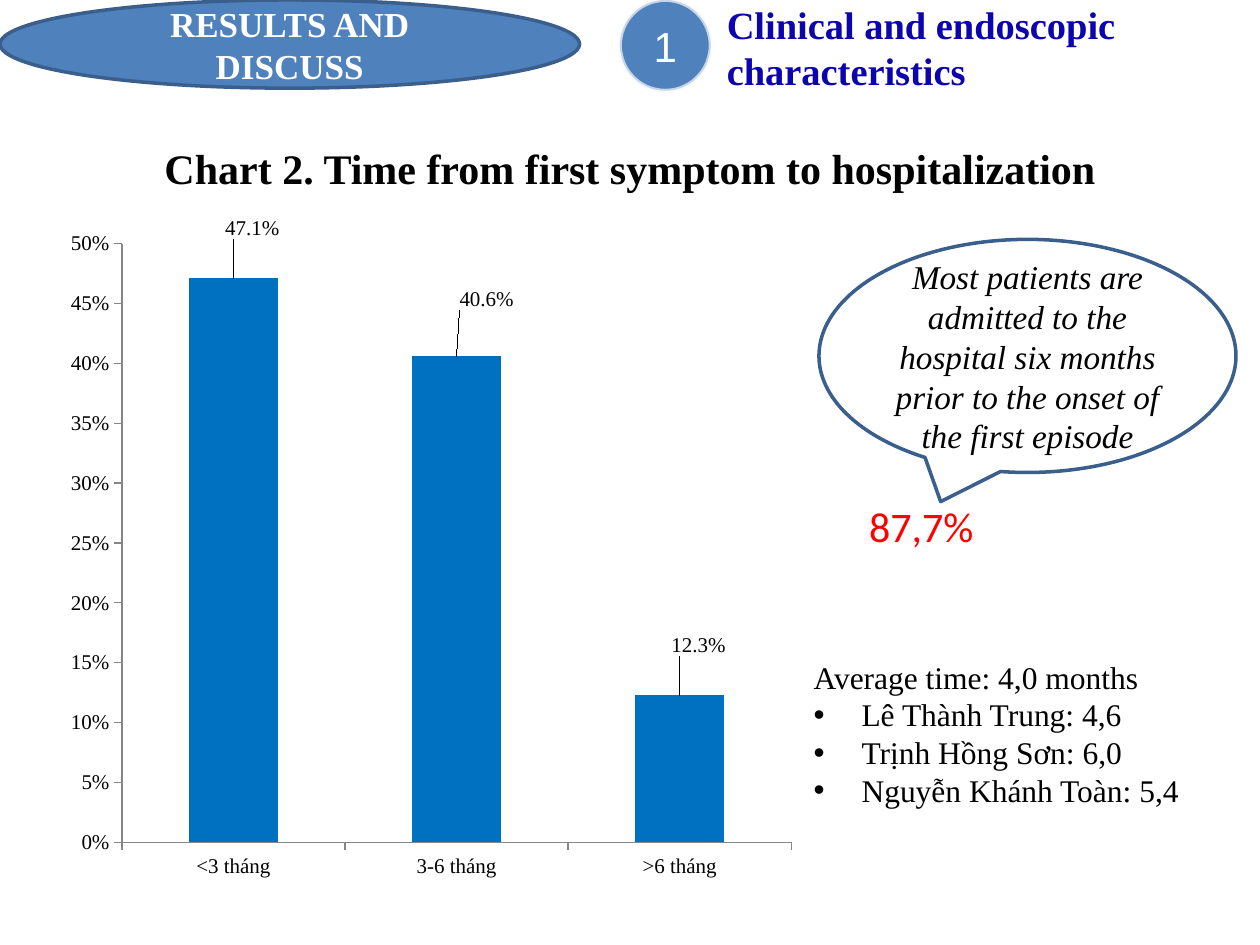
from lxml import etree
from pptx import Presentation
from pptx.chart.data import CategoryChartData
from pptx.dml.color import RGBColor
from pptx.enum.chart import XL_CHART_TYPE, XL_LABEL_POSITION, XL_TICK_MARK
from pptx.enum.shapes import MSO_SHAPE
from pptx.enum.text import MSO_ANCHOR, PP_ALIGN
from pptx.oxml import parse_xml
from pptx.oxml.ns import nsdecls, qn
from pptx.util import Inches, Pt

OVAL, BUBBLE = MSO_SHAPE.OVAL, MSO_SHAPE.OVAL_CALLOUT
LEFT, CENTER = PP_ALIGN.LEFT, PP_ALIGN.CENTER
TOP, MIDDLE = MSO_ANCHOR.TOP, MSO_ANCHOR.MIDDLE
COLUMN = XL_CHART_TYPE.COLUMN_CLUSTERED
ABOVE = XL_LABEL_POSITION.OUTSIDE_END
OUT = XL_TICK_MARK.OUTSIDE

BLACK = RGBColor(0x00, 0x00, 0x00)
WHITE = RGBColor(0xFF, 0xFF, 0xFF)
BLUE = RGBColor(0x4F, 0x81, 0xBD)
EDGE = RGBColor(0x3A, 0x5F, 0x8C)
PALE = RGBColor(0xF8, 0xF8, 0xF8)
NAVY = RGBColor(0x0C, 0x04, 0xAC)
RED = RGBColor(0xFF, 0x00, 0x00)
BAR = RGBColor(0x00, 0x70, 0xC0)
GREY = RGBColor(0x86, 0x86, 0x86)
SERIF = "Times New Roman"

# Content
TITLE = "Chart 2. Time from first symptom to hospitalization"
BADGE = ["RESULTS AND", "DISCUSS"]
TOPIC = "Clinical and endoscopic characteristics"
NOTE = ("Most patients are admitted to the hospital six months "
        "prior to the onset of the first episode")
SHARE = "87,7%"
MEAN = "Average time: 4,0 months"
STUDIES = ["Lê Thành Trung: 4,6", "Trịnh Hồng Sơn: 6,0",
           "Nguyễn Khánh Toàn: 5,4"]
# Group, share of patients, label shift as a part of the chart size
TIMES = [("<3 tháng", 0.471, (0.025, -0.05)),
         ("3-6 tháng", 0.406, (0.04, -0.06)),
         (">6 tháng", 0.123, (0.025, -0.05))]
PLOT = {"x": 0.09, "y": 0.04, "w": 0.89, "h": 0.89}


def write(shape, lines, size, color, align=LEFT, anchor=TOP, wrap=True, **look):
    frame = shape.text_frame
    frame.word_wrap, frame.vertical_anchor = wrap, anchor
    frame.text = "\n".join(lines)
    style = {"name": SERIF, "size": Pt(size), **look}
    for para in frame.paragraphs:
        para.alignment = align
        for run in para.runs:
            run.font.color.rgb = color
            for key, value in style.items():
                setattr(run.font, key, value)
    return frame


def draw(shapes, kind, box, fill, line, width):
    shape = shapes.add_shape(kind, *map(Inches, box))
    shape.shadow.inherit = False
    shape.fill.solid()
    shape.fill.fore_color.rgb = fill
    shape.line.color.rgb = line
    shape.line.width = Pt(width)
    return shape


def text(shapes, box, *args, **look):
    return write(shapes.add_textbox(*map(Inches, box)), *args, **look)


def layout(**parts):
    modes = [(key + "Mode", "edge") for key in "xy" if "w" in parts]
    items = "".join(f'<c:{key} val="{value}"/>'
                    for key, value in [*modes, *parts.items()])
    target = '<c:layoutTarget val="inner"/>' if "w" in parts else ""
    return parse_xml(f'<c:layout {nsdecls("c")}><c:manualLayout>'
                     f'{target}{items}</c:manualLayout></c:layout>')


def bullet(para):
    props = para._p.get_or_add_pPr()
    props.set("marL", str(Inches(0.38)))
    props.set("indent", str(Inches(-0.38)))
    etree.SubElement(props, qn("a:buFont")).set("typeface", "Arial")
    etree.SubElement(props, qn("a:buChar")).set("char", "•")


def graph(shapes):
    data = CategoryChartData(number_format="0.0%")
    data.categories = [name for name, _, _ in TIMES]
    data.add_series("Series 1", [value for _, value, _ in TIMES])
    box = map(Inches, (0.43, 1.72, 5.97, 5.34))
    chart = shapes.add_chart(COLUMN, *box, data).chart
    chart.has_legend = chart.has_title = False
    chart.font.name, chart.font.size = SERIF, Pt(12)
    chart.font.color.rgb = BLACK

    # Axes and plot area
    for axis in (chart.category_axis, chart.value_axis):
        axis.has_major_gridlines = False
        axis.major_tick_mark = OUT
        axis.format.line.color.rgb = GREY
    scale = chart.value_axis
    scale.minimum_scale, scale.maximum_scale, scale.major_unit = 0, 0.5, 0.05
    scale.tick_labels.number_format = "0%"
    scale.tick_labels.number_format_is_linked = False
    area = chart._chartSpace.chart.plotArea
    for old in area.findall(qn("c:layout")):
        area.remove(old)
    area.insert(0, layout(**PLOT))

    # Bars and shifted labels
    plot = chart.plots[0]
    plot.gap_width, plot.vary_by_categories = 150, False
    bars = plot.series[0]
    bars.format.fill.solid()
    bars.format.fill.fore_color.rgb = BAR
    labels = bars.data_labels
    labels.show_value = True
    labels.number_format, labels.number_format_is_linked = "0.0%", False
    for spot in range(len(TIMES)):
        bars.points[spot].data_label.position = ABOVE
    tags = bars._element.iter(qn("c:dLbl"))
    for tag, (_, _, (right, down)) in zip(tags, TIMES):
        tag.insert(1, layout(x=right, y=down))
        tag.insert(2, parse_xml(f'<c:numFmt {nsdecls("c")} '
                                'formatCode="0.0%" sourceLinked="0"/>'))


def main():
    deck = Presentation()
    deck.slide_width, deck.slide_height = Inches(10), Inches(7.5)
    slide = deck.slides.add_slide(deck.slide_layouts[5])
    shapes = slide.shapes

    # Title
    title = shapes.title
    title.left, title.top, title.width, title.height = map(
        Inches, (0, 1.08, 10, 0.7))
    write(title, [TITLE], 24, BLACK, CENTER, bold=True)

    # Numbered topic
    group = shapes.add_group_shape().shapes
    disc = draw(group, OVAL, (4.92, 0, 0.72, 0.72), BLUE, PALE, 2.25)
    tint = disc.line._ln.find(".//" + qn("a:srgbClr"))
    etree.SubElement(tint, qn("a:alpha")).set("val", "70000")
    text(group, (4.97, 0.11, 0.62, 0.5), ["1"], 24, WHITE, CENTER, name="Arial")
    topic = text(shapes, (5.67, -0.19, 4.33, 1.51), [TOPIC], 22, NAVY, bold=True)
    topic.margin_top = Inches(0.2)

    # Callout and section badge
    text(shapes, (6.8, 3.92, 1.04, 0.5), [SHARE], 24, RED,
         wrap=False, name="Calibri")
    bubble = draw(shapes, BUBBLE, (6.5, 1.9, 3.31, 1.85), WHITE, EDGE, 2)
    write(bubble, [NOTE], 19, BLACK, CENTER, MIDDLE, italic=True)
    badge = draw(shapes, OVAL, (0, 0, 4.6, 0.7), BLUE, EDGE, 2)
    write(badge, BADGE, 20, WHITE, CENTER, MIDDLE, bold=True)

    # Average times
    means = text(shapes, (6.36, 5.17, 5, 1.31), [MEAN, *STUDIES], 18, BLACK)
    for para in means.paragraphs[1:]:
        bullet(para)

    graph(shapes)
    deck.save("out.pptx")


if __name__ == "__main__":
    main()
